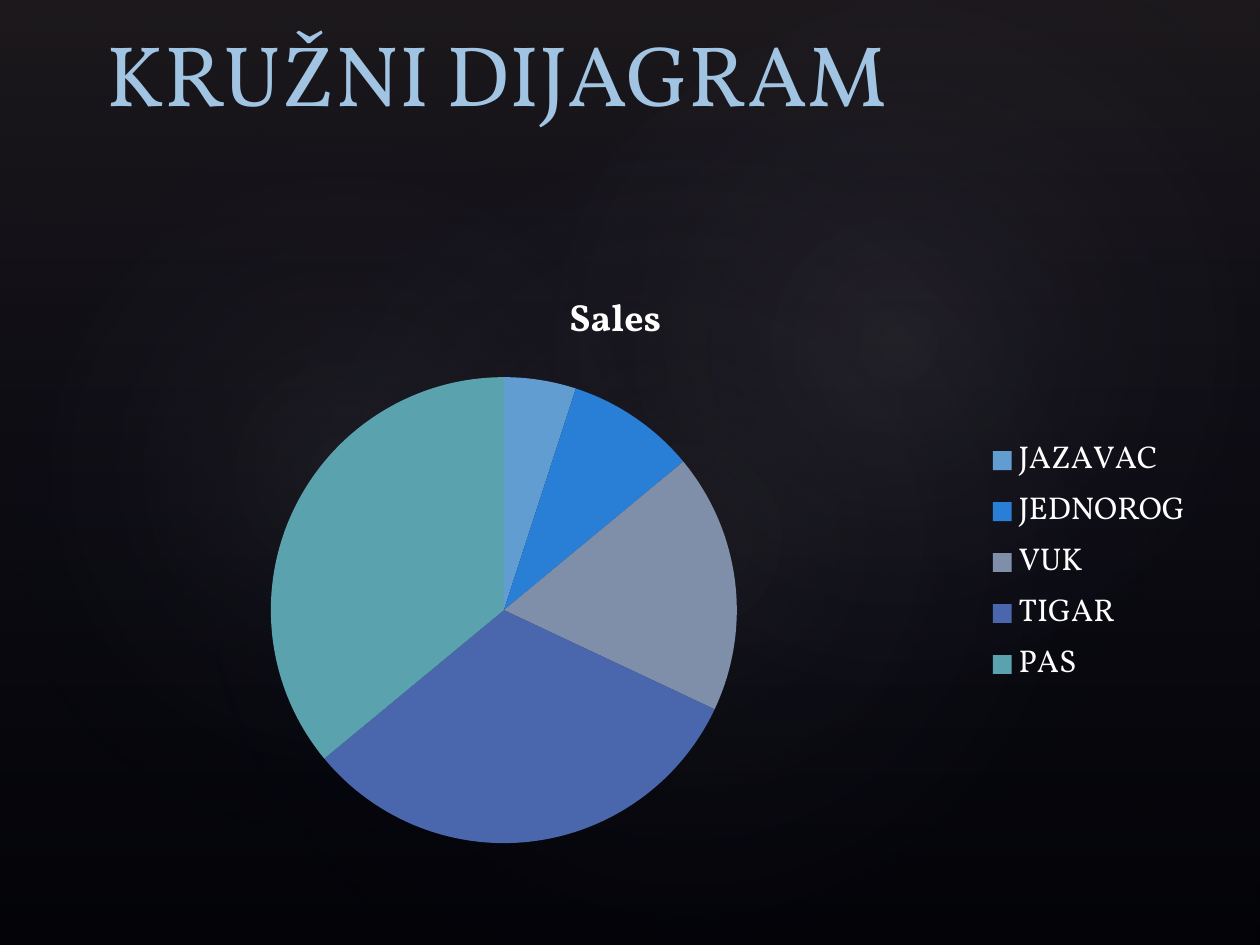
import pptx
import pptx.chart.data
import pptx.dml.color
import pptx.enum.chart
import pptx.enum.shapes
import pptx.enum.text
import pptx.oxml
import pptx.oxml.ns
import pptx.util

Inches = pptx.util.Inches
SHAPES = pptx.enum.shapes.MSO_SHAPE

# Content
TITLE = "KRUŽNI DIJAGRAM"
SERIES = "Sales"
SLICES = [  # category, value, colour
    ("JAZAVAC", 5, "629DD1"),
    ("JEDNOROG", 9, "297FD5"),
    ("VUK", 18, "7F8FA9"),
    ("TIGAR", 32, "4A66AC"),
    ("PAS", 36, "5AA2AE"),
]

THEME = {
    "font": "Vollkorn",
    "background": "000000",
    "title": {"size": 49, "color": "A1C4E3"},
    "chart": {"size": 18, "color": "FFFFFF"},
    "chart title": {"size": 21.6, "color": "FFFFFF", "bold": True},
    "veil": [(0, "504652", 36), (100, "242852", 10)],
}
LINEAR = '<a:lin ang="5400000" scaled="0"/>'
RADIAL = ('<a:path path="circle"><a:fillToRect l="50000" t="50000" '
          'r="50000" b="50000"/></a:path>')


def glow(strength):
    return [(0, "C4BCC6", strength), (58, "242852", 0)]


# Backdrop: shape, box, rotation, gradient stops (position, colour, opacity), direction
BACKDROP = [
    (SHAPES.RECTANGLE, (0, 0, 10, 7.5), 0, THEME["veil"], LINEAR),
    (SHAPES.OVAL, (1.5, 1.14, 7.92, 6.24), 328.7, glow(7), RADIAL),
    (SHAPES.OVAL, (-0.3, 1.28, 6.06, 4.9), 294.3, glow(8), RADIAL),
    (SHAPES.OVAL, (3.58, 0.13, 7.09, 5.2), 328.7, glow(8), RADIAL),
]
CHART_BOX = (0.2, 2.1, 9.37, 4.73)
TITLE_BOX = (0.75, 0.03, 8.25, 1)


def rgb(color):
    return pptx.dml.color.RGBColor.from_string(color)


def style(font, look):
    values = {"name": THEME["font"], "size": pptx.util.Pt(look["size"]),
              "bold": look.get("bold", False)}
    for name, value in values.items():
        setattr(font, name, value)
    font.color.rgb = rgb(look["color"])


def add_backdrop(page, kind, place, rotation, stops, direction):
    shape = page.shapes.add_shape(kind, *map(Inches, place))
    shape.rotation = rotation
    shape.shadow.inherit = False
    shape.line.fill.background()
    stop_xml = "".join(
        f'<a:gs pos="{position * 1000}"><a:srgbClr val="{color}">'
        f'<a:alpha val="{opacity * 1000}"/></a:srgbClr></a:gs>'
        for position, color, opacity in stops)
    gradient = pptx.oxml.parse_xml(
        f'<a:gradFill {pptx.oxml.ns.nsdecls("a")} rotWithShape="1">'
        f'<a:gsLst>{stop_xml}</a:gsLst>{direction}</a:gradFill>')
    shape.element.spPr.find(pptx.oxml.ns.qn("a:prstGeom")).addnext(gradient)


def add_pie(page):
    data = pptx.chart.data.CategoryChartData()
    data.categories = [name for name, _, _ in SLICES]
    data.add_series(SERIES, [value for _, value, _ in SLICES])
    chart = page.shapes.add_chart(
        pptx.enum.chart.XL_CHART_TYPE.PIE, *map(Inches, CHART_BOX), data).chart
    style(chart.font, THEME["chart"])

    chart.has_title = True
    para = chart.chart_title.text_frame.paragraphs[0]
    span = para.add_run()
    span.text = SERIES
    style(span.font, THEME["chart title"])
    chart.chart_title.include_in_layout = False

    chart.has_legend = True
    chart.legend.position = pptx.enum.chart.XL_LEGEND_POSITION.RIGHT
    chart.legend.include_in_layout = False
    style(chart.legend.font, THEME["chart"])

    plot = chart.plots[0]
    plot.vary_by_categories = True
    for index, (_, _, color) in enumerate(SLICES):
        fill = plot.series[0].points[index].format.fill
        fill.solid()
        fill.fore_color.rgb = rgb(color)


def add_title(page):
    frame = page.shapes.add_textbox(*map(Inches, TITLE_BOX)).text_frame
    frame.word_wrap = True
    frame.vertical_anchor = pptx.enum.text.MSO_ANCHOR.BOTTOM
    span = frame.paragraphs[0].add_run()
    span.text = TITLE
    style(span.font, THEME["title"])


def main():
    deck = pptx.Presentation()
    deck.slide_width, deck.slide_height = Inches(10), Inches(7.5)
    page = deck.slides.add_slide(deck.slide_layouts[6])
    page.background.fill.solid()
    page.background.fill.fore_color.rgb = rgb(THEME["background"])
    for part in BACKDROP:
        add_backdrop(page, *part)
    add_pie(page)
    add_title(page)
    deck.save("out.pptx")


if __name__ == "__main__":
    main()
